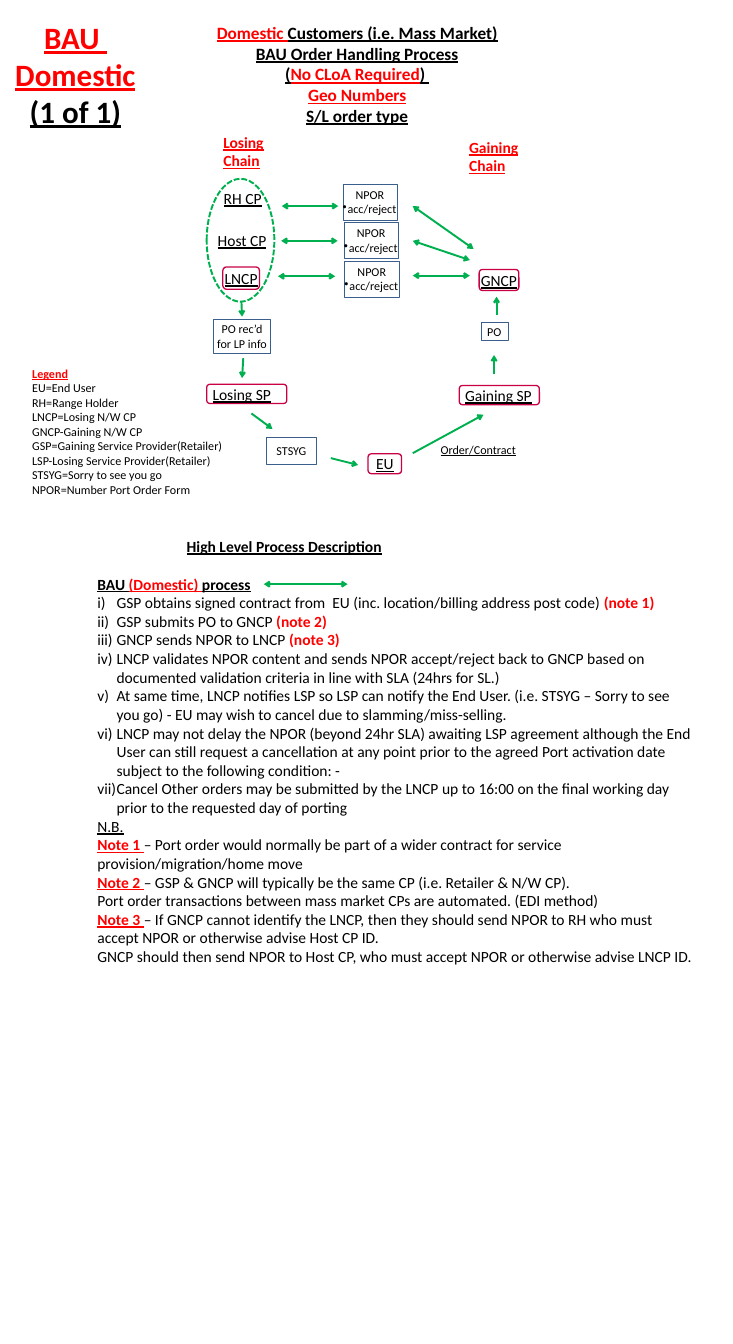
"""Build the one-page domestic order handling process slide."""
from dataclasses import dataclass
from typing import NamedTuple

from lxml import etree
from pptx import Presentation
from pptx import util as u
from pptx.dml.color import RGBColor
from pptx.enum import dml, shapes, text
from pptx.oxml.ns import qn

BLACK = RGBColor(0x00, 0x00, 0x00)
WHITE = RGBColor(0xFF, 0xFF, 0xFF)
RED = RGBColor(0xFF, 0x00, 0x00)
GREEN = RGBColor(0x00, 0xB0, 0x50)
CRIMSON = RGBColor(0xC9, 0x00, 0x44)
BLUE = RGBColor(0x3A, 0x5F, 0x8C)
CELL = u.Inches(0.1)
COLUMNS, ROWS = 118.1, 216.5
LEFT, CENTER = text.PP_ALIGN.LEFT, text.PP_ALIGN.CENTER
RECT, ROUND = shapes.MSO_SHAPE.RECTANGLE, shapes.MSO_SHAPE.ROUNDED_RECTANGLE


class Run(NamedTuple):
    text: str
    color: RGBColor = BLACK
    bold: bool = False
    underline: bool = False


class Area(NamedTuple):
    col: float
    row: float
    cols: float
    rows: float


class Arrow(NamedTuple):
    col1: float
    row1: float
    col2: float
    row2: float
    both: bool = False


@dataclass
class Para:
    runs: list[Run]
    bullet: str = ""
    indent: float = 0
    before: float = 0


@dataclass
class Label:
    area: Area
    paras: list[Para]
    size: int = 18
    align: text.PP_ALIGN = LEFT


@dataclass
class Box(Label):
    kind: shapes.MSO_SHAPE = RECT
    align: text.PP_ALIGN = CENTER


def grid(n: float) -> int:
    return u.Emu(round(n * CELL))


def plain(*lines: str) -> list[Para]:
    return [Para([Run(line)]) for line in lines]


def marked(*lines: str, color: RGBColor = BLACK, bold: bool = False) -> list[Para]:
    return [Para([Run(line, color, bold, True)]) for line in lines]


def step(line: str, note: str = "") -> Para:
    runs = [Run(line)] + ([Run(note, RED, True)] if note else [])
    return Para(runs, "auto", 3.1)


def note(name: str, line: str) -> Para:
    return Para([Run(name, RED, True, True), Run(line)])


def add_bullet(p, para: Para) -> None:
    props = p._p.get_or_add_pPr()
    props.set("marL", str(grid(para.indent)))
    if para.bullet == "auto":
        props.set("indent", str(-grid(para.indent)))
        etree.SubElement(props, qn("a:buAutoNum"), type="romanLcParenR")
    elif para.bullet:
        etree.SubElement(props, qn("a:buChar"), char=para.bullet)


def write(tf, label: Label) -> None:
    tf.word_wrap = label.align == LEFT
    for i, para in enumerate(label.paras):
        p = tf.add_paragraph() if i else tf.paragraphs[0]
        p.alignment = label.align
        if para.bullet or para.indent:
            add_bullet(p, para)
        if para.before:
            p.space_before = u.Pt(para.before)
        p.font.name, p.font.size = "Calibri", u.Pt(label.size)
        for run in para.runs:
            r = p.add_run()
            r.text = run.text
            font = p.font if len(para.runs) == 1 else r.font
            font.color.rgb = run.color
            font.bold, font.underline = run.bold, run.underline


def add_label(slide, label: Label) -> None:
    write(slide.shapes.add_textbox(*map(grid, label.area)).text_frame, label)


def add_title(slide, label: Label) -> None:
    sp = slide.shapes.title
    sp.left, sp.top, sp.width, sp.height = map(grid, label.area)
    sp.text_frame.vertical_anchor = text.MSO_ANCHOR.TOP
    sp.text_frame.auto_size = text.MSO_AUTO_SIZE.NONE
    write(sp.text_frame, label)


def add_outline(slide, kind: shapes.MSO_SHAPE, area: Area, color: RGBColor, width: float):
    sp = slide.shapes.add_shape(kind, *map(grid, area))
    sp.shadow.inherit = False
    sp.fill.background()
    sp.line.color.rgb, sp.line.width = color, u.Pt(width)
    return sp


def add_box(slide, box: Box) -> None:
    rounded = box.kind == ROUND
    sp = add_outline(slide, box.kind, box.area, *((CRIMSON, 1.5) if rounded else (BLUE, 0.25)))
    if rounded:
        sp.fill.solid()
        sp.fill.fore_color.rgb = WHITE
    tf = sp.text_frame
    tf.vertical_anchor = text.MSO_ANCHOR.MIDDLE
    tf.margin_top = tf.margin_bottom = tf.margin_right = 0
    tf.margin_left = grid(0.8 if box.align == LEFT else 0)
    write(tf, box)


def add_arrow(slide, arrow: Arrow) -> None:
    line = slide.shapes.add_connector(shapes.MSO_CONNECTOR.STRAIGHT, *map(grid, arrow[:4]))
    line.line.color.rgb, line.line.width = GREEN, u.Pt(2.25)
    ln = line.line._get_or_add_ln()
    for end in ("a:headEnd", "a:tailEnd") if arrow.both else ("a:tailEnd",):
        etree.SubElement(ln, qn(end), type="arrow")
    etree.SubElement(line._element.spPr, qn("a:effectLst"))


TITLE = Label(Area(1.3, 2.4, 21.7, 19.2), marked("BAU ", "Domestic", color=RED, bold=True)
              + marked("(1 of 1)", bold=True), 36, CENTER)
HEADING = [
    Para([Run("Domestic ", RED, True, True), Run("Customers (i.e. Mass Market)", BLACK, True, True)]),
    *marked("BAU Order Handling Process", bold=True),
    Para([Run("(", BLACK, True, True), Run("No CLoA Required", RED, True, True), Run(") ", BLACK, True, True)]),
    *marked("Geo Numbers", color=RED, bold=True),
    *marked("S/L order type", bold=True),
]
LEGEND = marked("Legend", color=RED, bold=True) + plain(
    "EU=End User", "RH=Range Holder", "LNCP=Losing N/W CP", "GNCP-Gaining N/W CP",
    "GSP=Gaining Service Provider(Retailer)", "LSP-Losing Service Provider(Retailer)",
    "STSYG=Sorry to see you go", "NPOR=Number Port Order Form")
DESCRIPTION = [
    Para([Run("High Level Process Description", BLACK, True, True)], indent=14.4),
    Para([Run("BAU ", BLACK, True, True), Run("(Domestic) ", RED, True, True),
          Run("process", BLACK, True, True)], before=22),
    step("GSP obtains signed contract from  EU (inc. location/billing address post code) ", "(note 1)"),
    step("GSP submits PO to GNCP ", "(note 2)"),
    step("GNCP sends NPOR to LNCP ", "(note 3)"),
    step("LNCP validates NPOR content and sends NPOR accept/reject back to GNCP based on "
         "documented validation criteria in line with SLA (24hrs for SL.)"),
    step("At same time, LNCP notifies LSP so LSP can notify the End User. (i.e. STSYG – Sorry "
         "to see you go) - EU may wish to cancel due to slamming/miss-selling."),
    step("LNCP may not delay the NPOR (beyond 24hr SLA) awaiting LSP agreement although the "
         "End User can still request a cancellation at any point prior to the agreed Port "
         "activation date subject to the following condition: -"),
    step("Cancel Other orders may be submitted by the LNCP up to 16:00 on the final working "
         "day prior to the requested day of porting"),
    *marked("N.B."),
    note("Note 1 ", "– Port order would normally be part of a wider contract for service "
         "provision/migration/home move"),
    note("Note 2 ", "– GSP & GNCP will typically be the same CP (i.e. Retailer & N/W CP)."),
    *plain("Port order transactions between mass market CPs are automated. (EDI method)"),
    note("Note 3 ", "– If GNCP cannot identify the LNCP, then they should send NPOR to RH who "
         "must accept NPOR or otherwise advise Host CP ID."),
    *plain("GNCP should then send NPOR to Host CP, who must accept NPOR or otherwise advise LNCP ID."),
]
LABELS = [
    Label(Area(33, 3.1, 49.1, 17.8), HEADING, 20, CENTER),
    Label(Area(35, 20.9, 10, 7.1), marked("Losing", "Chain", color=RED, bold=True)),
    Label(Area(74.6, 21.7, 11, 7.1), marked("Gaining", "Chain", color=RED, bold=True)),
    Label(Area(35, 29.9, 8.2, 4), marked("RH CP"), align=CENTER),
    Label(Area(34, 36.7, 10, 4), marked("Host CP"), align=CENTER),
    Label(Area(70, 70.7, 18.4, 3.4), marked("Order/Contract"), 14),
    Label(Area(4.2, 58.5, 33, 22.2), LEGEND, 14),
    Label(Area(14.7, 86, 98.4, 82.8), DESCRIPTION),
]
NPOR = [Para([Run("NPOR")]), Para([Run("acc/reject")], "•")]
BOXES = [Box(Area(col, 29.6 + 6.2 * i, 8.8, 5.8), NPOR, 14) for i, col in enumerate((55.2, 55.4, 55.5))] + [
    Box(Area(34.4, 51.4, 9.2, 5.5), plain("PO rec’d", "for LP info"), 14),
    Box(Area(42.9, 70.4, 8.1, 4.3), plain("STSYG"), 14),
    Box(Area(77.5, 51.9, 4.3, 2.9), plain("PO"), 14),
    Box(Area(35.9, 43, 5.9, 3.6), marked("LNCP"), kind=ROUND),
    Box(Area(77.2, 43.4, 6.4, 3.4), marked("GNCP"), kind=ROUND),
    Box(Area(59.3, 73.1, 5.4, 3.2), marked("EU"), kind=ROUND),
    Box(Area(33.3, 61.9, 12.9, 3.1), marked("Losing SP"), align=LEFT, kind=ROUND),
    Box(Area(74, 62.1, 12.9, 3.1), marked("Gaining SP"), align=LEFT, kind=ROUND),
]
ARROWS = [
    Arrow(38.9, 48.6, 39, 51), Arrow(39.2, 57.7, 39, 60.9), Arrow(40.5, 66.6, 43.9, 69.1),
    Arrow(53.3, 73.8, 57.7, 74.9), Arrow(66.5, 73, 77.9, 66.8), Arrow(79.6, 60.2, 79.6, 57.2),
    Arrow(80, 50.7, 80, 47.8), Arrow(54.5, 33.2, 45.4, 33.2, True),
    Arrow(54.4, 38.8, 45.3, 38.8, True), Arrow(54, 44.5, 44.8, 44.5, True),
    Arrow(76.3, 40.1, 66.5, 33.2, True), Arrow(75.7, 41.9, 66.5, 38.8, True),
    Arrow(75.7, 44.4, 66.5, 44.4, True), Arrow(56, 94.1, 42.5, 94.1, True),
]


def main() -> None:
    prs = Presentation()
    prs.slide_width, prs.slide_height = grid(COLUMNS), grid(ROWS)
    slide = prs.slides.add_slide(prs.slide_layouts[5])
    add_title(slide, TITLE)
    for box in BOXES:
        add_box(slide, box)
    for label in LABELS:
        add_label(slide, label)
    chain = add_outline(slide, shapes.MSO_SHAPE.OVAL, Area(33.3, 28.8, 10.9, 19.8), GREEN, 2.25)
    chain.line.dash_style = dml.MSO_LINE.SQUARE_DOT
    for arrow in ARROWS:
        add_arrow(slide, arrow)
    prs.save("out.pptx")


if __name__ == "__main__":
    main()
